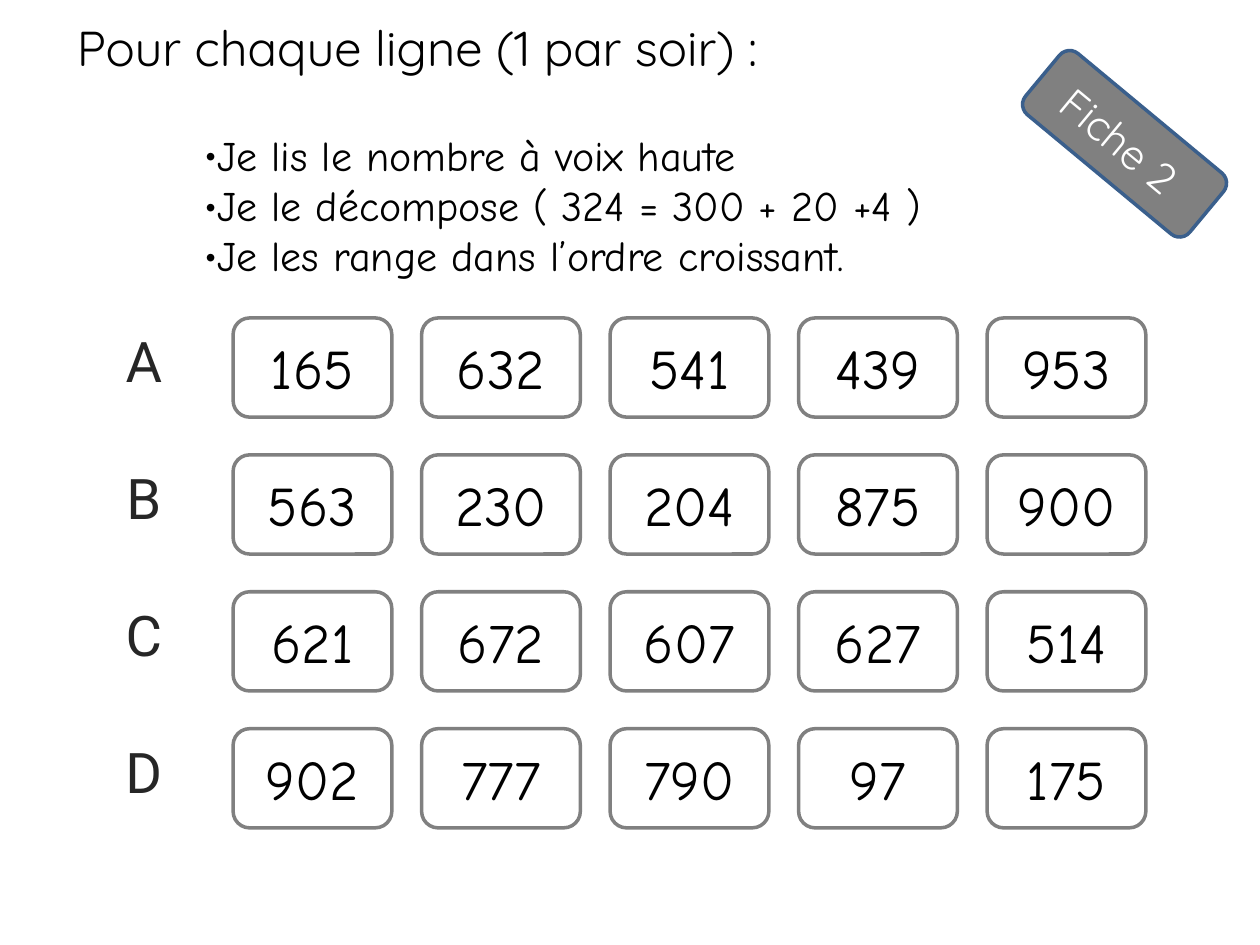
from pptx import Presentation
from pptx.dml.color import RGBColor
from pptx.enum.shapes import MSO_SHAPE
from pptx.enum.text import MSO_ANCHOR, PP_ALIGN
from pptx.oxml.ns import qn
from pptx.util import Cm, Pt
from lxml.etree import SubElement

prs = Presentation()
prs.slide_width, prs.slide_height = Cm(25.4), Cm(19.05)
slide = prs.slides.add_slide(prs.slide_layouts[6])


def write(shape, text, font, size, color, align=PP_ALIGN.LEFT):
    frame = shape.text_frame
    frame.word_wrap = True
    frame.text = text
    for paragraph in frame.paragraphs:
        paragraph.alignment = align
        for run in paragraph.runs:
            run.font.name = font
            run.font.size = Pt(size)
            run.font.color.rgb = RGBColor.from_string(color)


def add_card(left, top, width, height, fill, line):
    card = slide.shapes.add_shape(
        MSO_SHAPE.ROUNDED_RECTANGLE, Cm(left), Cm(top), Cm(width), Cm(height))
    card.shadow.inherit = False
    card.fill.solid()
    card.fill.fore_color.rgb = RGBColor.from_string(fill)
    card.line.color.rgb = RGBColor.from_string(line)
    card.line.width = Pt(2)
    card.text_frame.vertical_anchor = MSO_ANCHOR.MIDDLE
    return card


heading = slide.shapes.add_textbox(Cm(1.3), Cm(0.23), Cm(18), Cm(1.5))
write(heading, "Pour chaque ligne (1 par soir) :", "Quicksand", 28, "000000")

instructions = slide.shapes.add_textbox(Cm(3.87), Cm(2.48), Cm(17), Cm(3.3))
steps = [
    "Je lis le nombre à voix haute",
    "Je le décompose ( 324 = 300 + 20 +4 )",
    "Je les range dans l’ordre croissant.",
]
write(instructions, "\n".join(steps), "Comic Neue", 24, "000000")
for step in instructions.text_frame.paragraphs:
    properties = step._p.get_or_add_pPr()
    properties.set("marL", str(Cm(0.23)))
    properties.set("indent", str(-Cm(0.23)))
    SubElement(properties, qn("a:buFont"), typeface="Comic Neue")
    SubElement(properties, qn("a:buChar"), char="•")

number_rows = {
    "A": [165, 632, 541, 439, 953],
    "B": [563, 230, 204, 875, 900],
    "C": [621, 672, 607, 627, 514],
    "D": [902, 777, 790, 97, 175],
}
for row, (letter, numbers) in enumerate(number_rows.items()):
    top = 6.41 + row * 2.76
    row_label = slide.shapes.add_textbox(Cm(1.9), Cm(top + 0.05), Cm(2), Cm(2.2))
    write(row_label, letter, "Roboto", 32, "262626", PP_ALIGN.CENTER)
    for column, number in enumerate(numbers):
        number_card = add_card(4.7 + column * 3.8, top, 3.2, 2, "FFFFFF", "808080")
        write(number_card, str(number), "Comic Neue", 32, "000000", PP_ALIGN.CENTER)

sheet_badge = add_card(20.52, 2.1, 4.3, 1.6, "808080", "3A5F8C")
sheet_badge.rotation = 39.7
write(sheet_badge, "Fiche 2 ", "Quicksand", 24, "FFFFFF", PP_ALIGN.CENTER)

prs.save("out.pptx")
